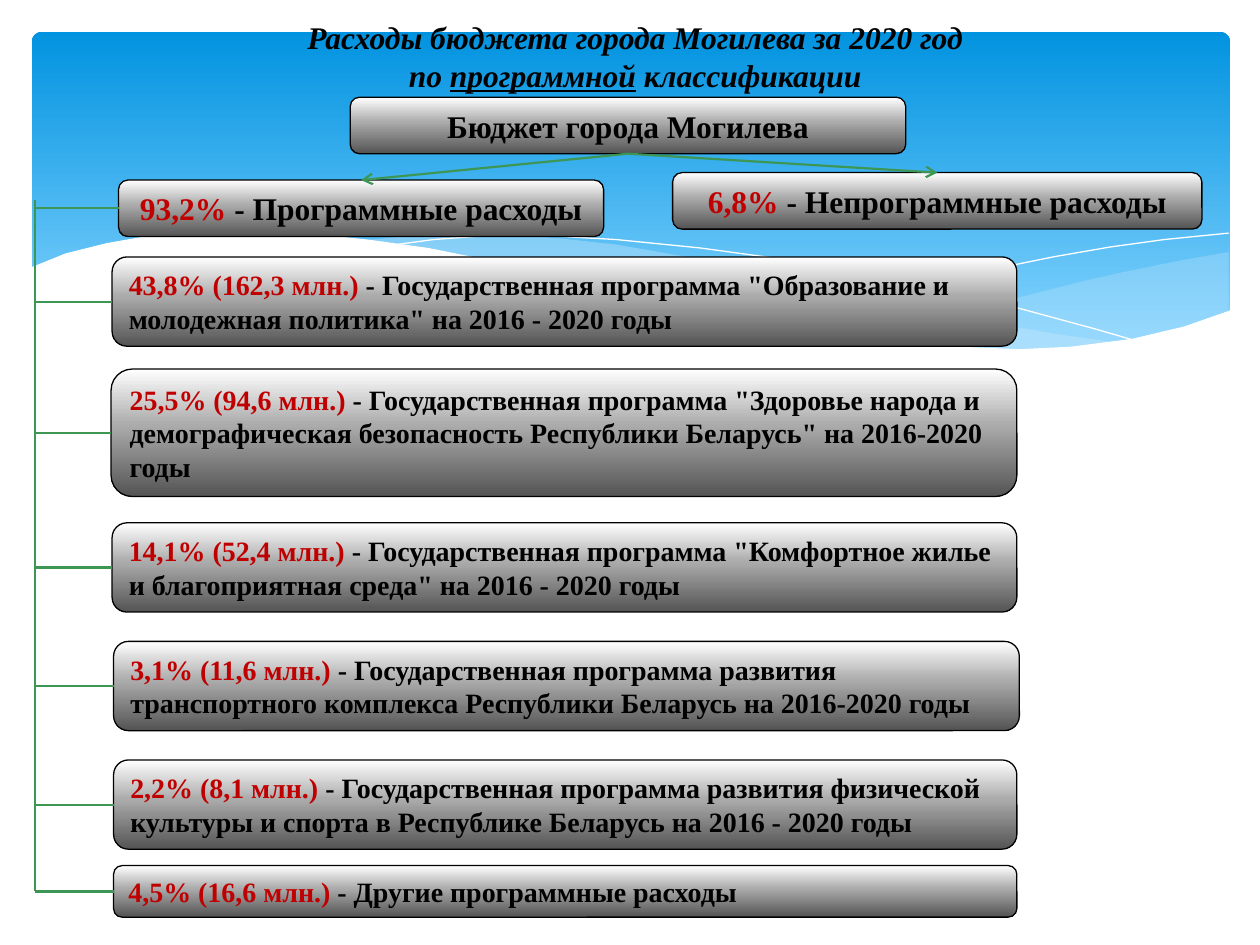
from dataclasses import dataclass

from lxml import etree
from pptx import Presentation
from pptx import util as u
from pptx.dml.color import RGBColor
from pptx.enum import shapes, text
from pptx.oxml.ns import qn


@dataclass(frozen=True)
class Theme:
    font: str = "Times New Roman"
    heading: int = 18
    body: int = 16
    ink: str = "000000"
    accent: str = "C00000"
    connector: str = "3D9653"
    white: str = "FFFFFF"
    wave: str = "C6E7FC"
    sky: tuple = ((0, "0293E0"), (90, "83D3FE"))
    metal: tuple = ((0, "FFFFFF"), (44, "ABABAB"), (100, "545454"))


@dataclass(frozen=True)
class Card:
    """A budget box; lengths are in centimetres."""
    left: float
    top: float
    width: float
    height: float
    share: str
    label: str

    @property
    def centre(self) -> float:
        return self.left + self.width / 2

    @property
    def middle(self) -> float:
        return self.top + self.height / 2


@dataclass(frozen=True)
class Wave:
    """A background curve: filled when opacity is set, otherwise a thin line."""
    points: tuple
    color: str
    opacity: int = 0


T = Theme()
BUDGET = Card(7.06, 1.96, 11.2, 1.14, "", "Бюджет города Могилева")
PROGRAMME = Card(2.39, 3.63, 9.78, 1.14, "93,2%", " - Программные расходы")
OTHER = Card(13.56, 3.48, 10.67, 1.14, "6,8%", " - Непрограммные расходы")
ITEMS = (
    Card(2.26, 5.18, 18.24, 1.8, "43,8% (162,3 млн.) ",
         '- Государственная программа "Образование и молодежная политика" на 2016 - 2020 годы'),
    Card(2.24, 7.44, 18.26, 2.57, "25,5% (94,6 млн.) ",
         '- Государственная программа "Здоровье народа и демографическая безопасность '
         'Республики Беларусь" на 2016-2020 годы'),
    Card(2.26, 10.54, 18.24, 1.8, "14,1% (52,4 млн.) ",
         '- Государственная программа "Комфортное жилье и благоприятная среда" на 2016 - 2020 годы'),
    Card(2.29, 12.93, 18.26, 1.8, "3,1% (11,6 млн.) ",
         "- Государственная программа развития транспортного комплекса Республики Беларусь "
         "на 2016-2020 годы"),
    Card(2.29, 15.32, 18.21, 1.8, "2,2% (8,1 млн.) ",
         "- Государственная программа развития физической культуры и спорта в Республике Беларусь "
         "на 2016 - 2020 годы"),
    Card(2.29, 17.45, 18.21, 1.04, "4,5% (16,6 млн.) ", "- Другие программные расходы"),
)
SPINE_X, SPINE_TOP = 0.71, 4.04

WAVES = (
    Wave(((24.77, 5.08), (23.75, 5.26), (22.63, 5.49), (21.87, 5.66), (20.45, 6.02),
          (19.13, 6.3), (17.93, 6.53), (16.79, 6.73), (17.91, 6.88), (18.92, 6.98),
          (20.4, 7.06), (21.69, 7.01), (22.78, 6.86), (23.75, 6.65), (24.77, 6.27)), T.wave, 29),
    Wave(((22.68, 6.93), (21.26, 6.73), (19.68, 6.45), (17.93, 6.1), (15.98, 5.64),
          (14.83, 5.36), (13.74, 5.16), (12.42, 4.93), (11.23, 4.8), (10.13, 4.72),
          (9.17, 4.7), (8.33, 4.75), (7.26, 4.85), (8.69, 5.05), (10.26, 5.36),
          (11.4, 5.64), (13.46, 6.1), (15.27, 6.48), (16.89, 6.76), (18.34, 6.96),
          (19.63, 7.04), (20.78, 7.06), (21.77, 7.04)), T.wave, 40),
    Wave(((7.85, 4.95), (8.74, 4.83), (9.83, 4.75), (11, 4.75), (12.42, 4.83), (14.12, 5),
          (15.44, 5.18), (16.89, 5.41), (18.47, 5.74), (20.19, 6.12), (22.07, 6.63),
          (23.04, 6.91)), T.white),
    Wave(((15.57, 6.53), (17.07, 6.12), (18.29, 5.82), (19.71, 5.49), (21.23, 5.18),
          (22.38, 4.98), (23.47, 4.83), (24.77, 4.7)), T.white),
    Wave(((24.82, 6.25), (23.88, 6.58), (22.83, 6.83), (21.59, 6.99), (20.55, 7.04),
          (19.33, 6.99), (17.98, 6.86), (16.46, 6.65), (14.71, 6.35), (12.78, 5.92),
          (11.35, 5.59), (9.93, 5.26), (8.64, 5), (7.42, 4.83), (6.35, 4.72), (5.36, 4.67),
          (4.09, 4.67), (3.02, 4.75), (2.16, 4.9), (1.32, 5.11), (0.58, 5.41),
          (0.58, 8.36), (24.82, 8.36)), T.white, 100),
)


def rgb(value: str) -> RGBColor:
    return RGBColor.from_string(value)


def fill_gradient(sp, stops: tuple) -> None:
    """Fill from top to bottom with any number of (percent, colour) stops."""
    sp.fill.gradient()
    sp.fill.gradient_angle = 270
    gs_list = sp._element.spPr.find(qn("a:gradFill")).find(qn("a:gsLst"))
    for gs in list(gs_list):
        gs_list.remove(gs)
    for percent, color in stops:
        gs = etree.SubElement(gs_list, qn("a:gs"), pos=str(percent * 1000))
        etree.SubElement(gs, qn("a:srgbClr"), val=color)


def add_round_rect(slide, left: float, top: float, width: float, height: float, stops: tuple):
    sp = slide.shapes.add_shape(shapes.MSO_SHAPE.ROUNDED_RECTANGLE,
                                *map(u.Cm, (left, top, width, height)))
    sp.shadow.inherit = False
    fill_gradient(sp, stops)
    return sp


def add_wave(slide, wave: Wave) -> None:
    start, *rest = [(u.Cm(x), u.Cm(y)) for x, y in wave.points]
    builder = slide.shapes.build_freeform(*start)
    builder.add_line_segments(rest, close=wave.opacity > 0)
    sp = builder.convert_to_shape()
    sp.shadow.inherit = False
    if not wave.opacity:
        sp.fill.background()
        sp.line.color.rgb = rgb(wave.color)
        sp.line.width = u.Pt(0)
        return
    sp.line.fill.background()
    sp.fill.solid()
    sp.fill.fore_color.rgb = rgb(wave.color)
    color = sp._element.spPr.find(qn("a:solidFill"))[0]
    etree.SubElement(color, qn("a:alpha"), val=str(wave.opacity * 1000))


def add_run(p, content: str, size: int, color: str):
    r = p.add_run()
    r.text = content
    r.font.name, r.font.size, r.font.bold = T.font, u.Pt(size), True
    r.font.color.rgb = rgb(color)
    return r


def prepare_frame(sp):
    tf = sp.text_frame
    tf.word_wrap = True
    tf.vertical_anchor = text.MSO_ANCHOR.MIDDLE
    return tf


def add_title(slide) -> None:
    tf = prepare_frame(slide.shapes.add_textbox(*map(u.Cm, (0.41, 0.23, 24.79, 1.8))))
    lines = (("Расходы бюджета города Могилева за 2020 год",),
             ("по ", "программной", " классификации"))
    for p, parts in zip((tf.paragraphs[0], tf.add_paragraph()), lines):
        p.alignment = text.PP_ALIGN.CENTER
        for part in parts:
            r = add_run(p, part, T.heading, T.ink)
            r.font.italic = True
            r.font.underline = part == "программной"


def add_card(slide, card: Card, size: int, align: text.PP_ALIGN) -> None:
    sp = add_round_rect(slide, card.left, card.top, card.width, card.height, T.metal)
    sp.line.color.rgb = rgb(T.ink)
    sp.line.width = u.Pt(0.75)
    p = prepare_frame(sp).paragraphs[0]
    p.alignment = align
    if card.share:
        add_run(p, card.share, size, T.accent)
    add_run(p, card.label, size, T.ink)


def add_line(slide, x1: float, y1: float, x2: float, y2: float, arrow: bool = False) -> None:
    sp = slide.shapes.add_connector(shapes.MSO_CONNECTOR.STRAIGHT, *map(u.Cm, (x1, y1, x2, y2)))
    sp.line.color.rgb = rgb(T.connector)
    sp.line.width = u.Pt(1.25)
    if arrow:
        etree.SubElement(sp.line._get_or_add_ln(), qn("a:tailEnd"), type="arrow")
    etree.SubElement(sp._element.spPr, qn("a:effectLst"))


def main() -> None:
    prs = Presentation()
    prs.slide_width, prs.slide_height = u.Cm(25.4), u.Cm(19.05)
    slide = prs.slides.add_slide(prs.slide_layouts[6])

    sky = add_round_rect(slide, 0.64, 0.64, 24.16, 6.86, T.sky)
    sky.adjustments[0] = 0.03
    sky.line.fill.background()
    for wave in WAVES:
        add_wave(slide, wave)
    add_title(slide)

    for card in (BUDGET, PROGRAMME, OTHER):
        add_card(slide, card, T.heading, text.PP_ALIGN.CENTER)
    for card in ITEMS:
        add_card(slide, card, T.body, text.PP_ALIGN.LEFT)

    for card in (PROGRAMME, OTHER):
        add_line(slide, BUDGET.centre, BUDGET.top + BUDGET.height, card.centre, card.top, arrow=True)
    add_line(slide, SPINE_X, SPINE_TOP, SPINE_X, ITEMS[-1].middle)
    for card in (PROGRAMME, *ITEMS):
        add_line(slide, SPINE_X, card.middle, card.left, card.middle)
    prs.save("out.pptx")


if __name__ == "__main__":
    main()
